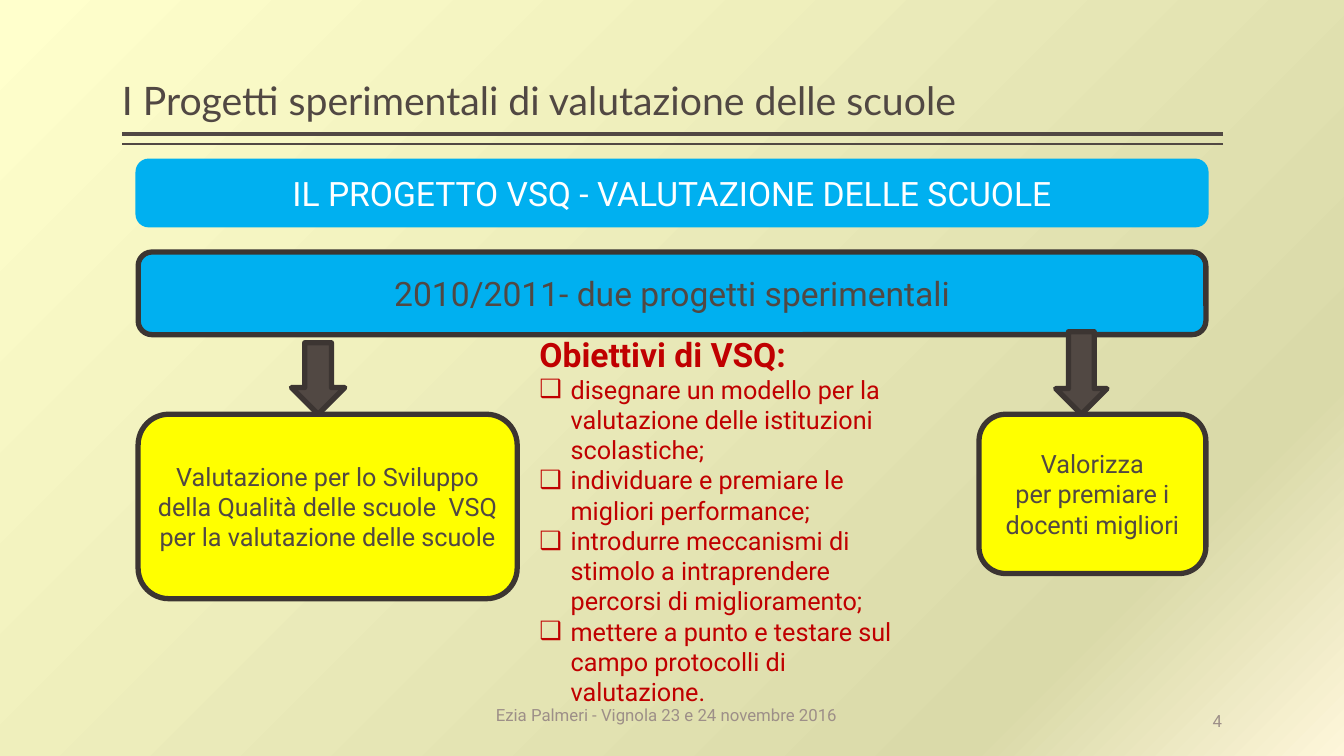
from lxml.etree import SubElement
from pptx import Presentation
from pptx.dml.color import RGBColor
from pptx.enum.shapes import MSO_CONNECTOR, MSO_SHAPE
from pptx.enum.text import MSO_ANCHOR, MSO_AUTO_SIZE, PP_ALIGN
from pptx.oxml.ns import qn
from pptx.util import Inches, Pt

HUES = {
    "brown": "514843", "edge": "3C3532", "grey": "9D8F88", "blue": "00B0F0",
    "yellow": "FFFF00", "red": "C00000", "white": "FFFFFF",
    "cream": "FEF6DA", "olive": "DADAA9", "pale": "FFFFCC",
}


def color(name):
    return RGBColor.from_string(HUES[name])


def style(para, size, hue, align=PP_ALIGN.LEFT, face="Roboto", bold=False):
    para.alignment = align
    para.space_before = Pt(0)
    font = para.font
    font.name, font.size, font.bold = face, Pt(size), bold
    font.color.rgb = color(hue)


prs = Presentation()
prs.slide_width, prs.slide_height = Inches(13.33), Inches(7.5)
slide = prs.slides.add_slide(prs.slide_layouts[1])
shapes = slide.shapes

# Background gradient
fill = slide.background.fill
fill.gradient()
fill.gradient_angle = 135
stops = next(slide.element.iter(qn("a:gsLst")))
for stop in list(stops):
    stops.remove(stop)
for pos, name in ((0, "cream"), (18, "olive"), (100, "pale")):
    stop = SubElement(stops, qn("a:gs"), pos=str(pos * 1000))
    SubElement(stop, qn("a:srgbClr"), val=HUES[name])

# Double rule under the title
for y, width in ((1.33, 3), (1.43, 1)):
    rule = shapes.add_connector(MSO_CONNECTOR.STRAIGHT, Inches(12.13), Inches(y),
                                Inches(1.21), Inches(y))
    rule.line.color.rgb = color("brown")
    rule.line.width = Pt(width)
    SubElement(rule._element.spPr, qn("a:effectLst"))

# Title
title = shapes.title
title.left, title.top = Inches(1.21), Inches(0.08)
title.width, title.height = Inches(10.92), Inches(1.2)
frame = title.text_frame
frame.text = "I Progetti sperimentali di valutazione delle scuole"
frame.auto_size = MSO_AUTO_SIZE.NONE
frame.vertical_anchor = MSO_ANCHOR.BOTTOM
frame.margin_left = frame.margin_right = 0
style(frame.paragraphs[0], 28, "brown", face="Lato")
frame.paragraphs[0].line_spacing = 0.9

# Footer and slide number
for text, x, y, width, align in (
    ("Ezia Palmeri - Vignola 23 e 24 novembre 2016", 3.15, 6.89, 6.92, PP_ALIGN.CENTER),
    ("4", 10.12, 6.95, 2, PP_ALIGN.RIGHT),
):
    box = shapes.add_textbox(Inches(x), Inches(y), Inches(width), Inches(0.4))
    frame = box.text_frame
    frame.word_wrap = True
    frame.vertical_anchor = MSO_ANCHOR.MIDDLE
    frame.margin_left = frame.margin_right = 0
    frame.text = text
    style(frame.paragraphs[0], 12, "grey", align)

# Banners, project boxes and arrows
BOX, ARROW = MSO_SHAPE.ROUNDED_RECTANGLE, MSO_SHAPE.DOWN_ARROW
for kind, x, y, width, height, back, edge, text, size, ink in (
    (BOX, 1.37, 1.6, 10.59, 0.63, "blue", "blue",
     "IL PROGETTO VSQ - VALUTAZIONE DELLE SCUOLE", 24, "white"),
    (BOX, 1.37, 2.5, 10.59, 0.82, "blue", "edge",
     "2010/2011- due progetti sperimentali", 24, "brown"),
    (BOX, 1.37, 4.11, 3.76, 1.83, "yellow", "edge",
     "Valutazione per lo Sviluppo della Qualità delle scuole  VSQ\n"
     "per la valutazione delle scuole", 18, "brown"),
    (BOX, 9.71, 4.11, 2.25, 1.58, "yellow", "edge",
     "Valorizza\nper premiare i docenti migliori", 18, "brown"),
    (ARROW, 10.47, 3.29, 0.51, 0.82, "brown", "edge", "", 18, "brown"),
    (ARROW, 2.89, 3.4, 0.53, 0.71, "brown", "edge", "", 18, "brown"),
):
    shape = shapes.add_shape(kind, Inches(x), Inches(y), Inches(width), Inches(height))
    shape.shadow.inherit = False
    shape.fill.solid()
    shape.fill.fore_color.rgb = color(back)
    shape.line.color.rgb = color(edge)
    shape.line.width = Pt(3.78)
    if text:
        frame = shape.text_frame
        frame.word_wrap = True
        frame.vertical_anchor = MSO_ANCHOR.MIDDLE
        frame.text = text
        for para in frame.paragraphs:
            style(para, size, ink, PP_ALIGN.CENTER)

# Goals of the project
goals = slide.placeholders[1]
goals.left, goals.top = Inches(5.25), Inches(3.26)
goals.width, goals.height = Inches(4), Inches(3.84)
frame = goals.text_frame
frame.auto_size = MSO_AUTO_SIZE.NONE
frame.vertical_anchor = MSO_ANCHOR.TOP
frame.text = "\n".join((
    "Obiettivi di VSQ:",
    "disegnare un modello per la valutazione delle istituzioni scolastiche;",
    "individuare e premiare le migliori performance;",
    "introdurre meccanismi di stimolo a intraprendere percorsi di miglioramento;",
    "mettere a punto e testare sul campo protocolli di valutazione.",
))
for i, para in enumerate(frame.paragraphs):
    props = para._p.get_or_add_pPr()
    dent = Inches(0.31) if i else 0
    props.set("marL", str(dent))
    props.set("indent", str(-dent))
    if i:
        SubElement(props, qn("a:buChar"), char="❑")
    else:
        SubElement(props, qn("a:buNone"))
    style(para, 18 if i else 24, "red", bold=i == 0)

# The goals lie in front of everything else
shapes._spTree.append(goals._element)

prs.save("out.pptx")
